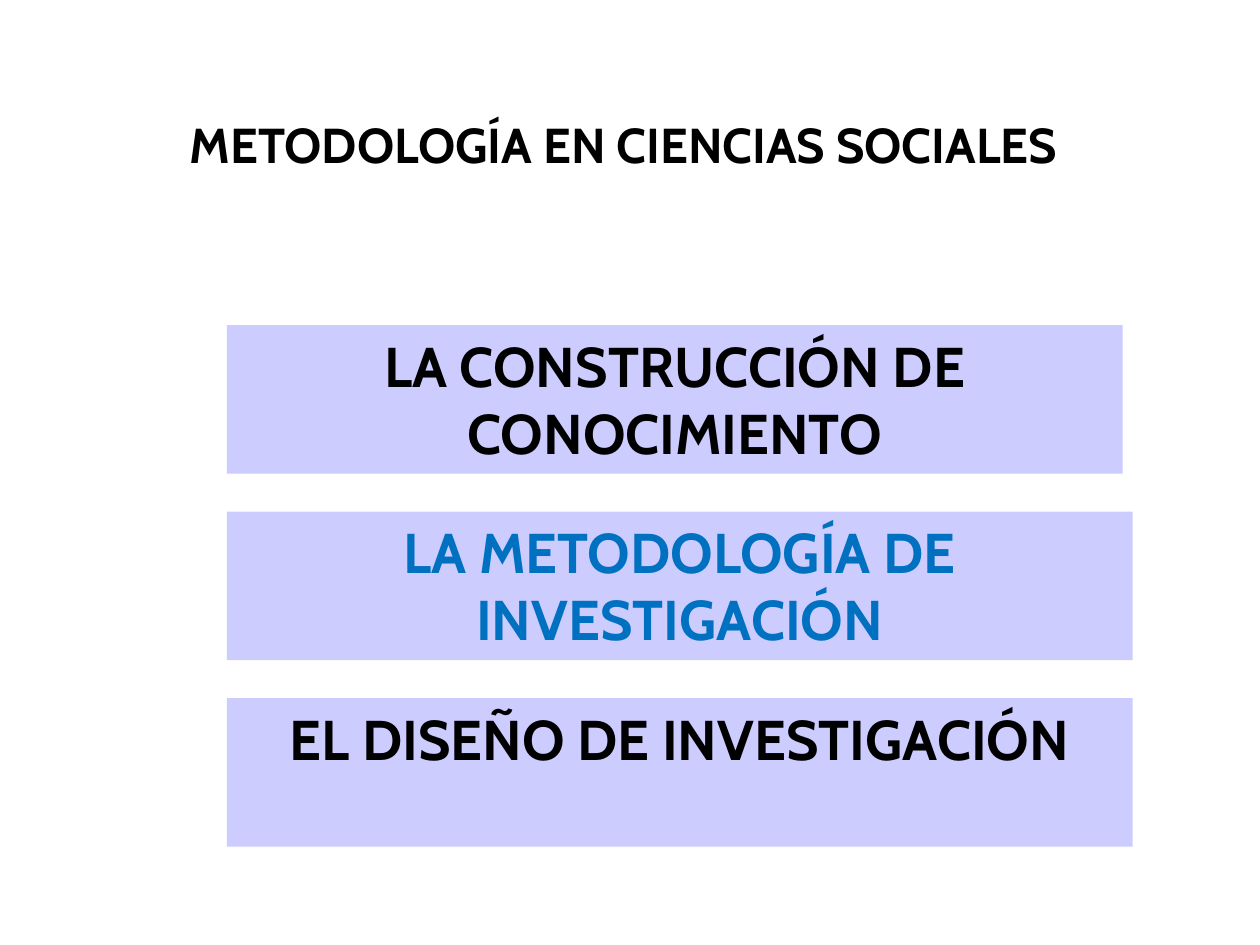
from dataclasses import dataclass

from pptx import Presentation
from pptx.dml.color import RGBColor
from pptx.enum.shapes import MSO_SHAPE
from pptx.enum.text import MSO_ANCHOR, PP_ALIGN
from pptx.util import Pt


@dataclass(frozen=True)
class Theme:
    font: str = "Cabin"
    title_size: int = 28
    topic_size: int = 32
    text: RGBColor = RGBColor(0x00, 0x00, 0x00)
    highlight: RGBColor = RGBColor(0x00, 0x70, 0xC0)
    panel: RGBColor = RGBColor(0xCC, 0xCC, 0xFF)


THEME = Theme()
TOPIC_LEFT, TOPIC_TOP, TOPIC_HEIGHT, TOPIC_PITCH = 129.6, 185.76, 84.96, 106.56
TOPICS = [
    ("LA CONSTRUCCIÓN DE CONOCIMIENTO", 511.92, THEME.text),
    ("LA METODOLOGÍA DE INVESTIGACIÓN", 517.68, THEME.highlight),
    ("EL DISEÑO DE INVESTIGACIÓN", 517.68, THEME.text),
]


def write_text(shape, text, size, color, alignment):
    frame = shape.text_frame
    frame.word_wrap = True
    frame.vertical_anchor = MSO_ANCHOR.TOP
    paragraph = frame.paragraphs[0]
    paragraph.alignment = alignment
    run = paragraph.add_run()
    run.text = text
    run.font.name = THEME.font
    run.font.size = Pt(size)
    run.font.bold = True
    run.font.color.rgb = color


def add_title(slide, text):
    shape = slide.shapes.add_textbox(Pt(101.52), Pt(61.92), Pt(601.92), Pt(41.04))
    write_text(shape, text, THEME.title_size, THEME.text, PP_ALIGN.LEFT)


def add_topic(slide, text, top, width, color):
    shape = slide.shapes.add_shape(
        MSO_SHAPE.RECTANGLE, Pt(TOPIC_LEFT), Pt(top), Pt(width), Pt(TOPIC_HEIGHT)
    )
    shape.shadow.inherit = False
    shape.fill.solid()
    shape.fill.fore_color.rgb = THEME.panel
    shape.line.fill.background()
    write_text(shape, text, THEME.topic_size, color, PP_ALIGN.CENTER)


def main():
    presentation = Presentation()
    presentation.slide_width = Pt(720)
    presentation.slide_height = Pt(540)
    slide = presentation.slides.add_slide(presentation.slide_layouts[6])
    add_title(slide, "METODOLOGÍA EN CIENCIAS SOCIALES")
    for index, (text, width, color) in enumerate(TOPICS):
        add_topic(slide, text, TOPIC_TOP + index * TOPIC_PITCH, width, color)
    presentation.save("out.pptx")


if __name__ == "__main__":
    main()
